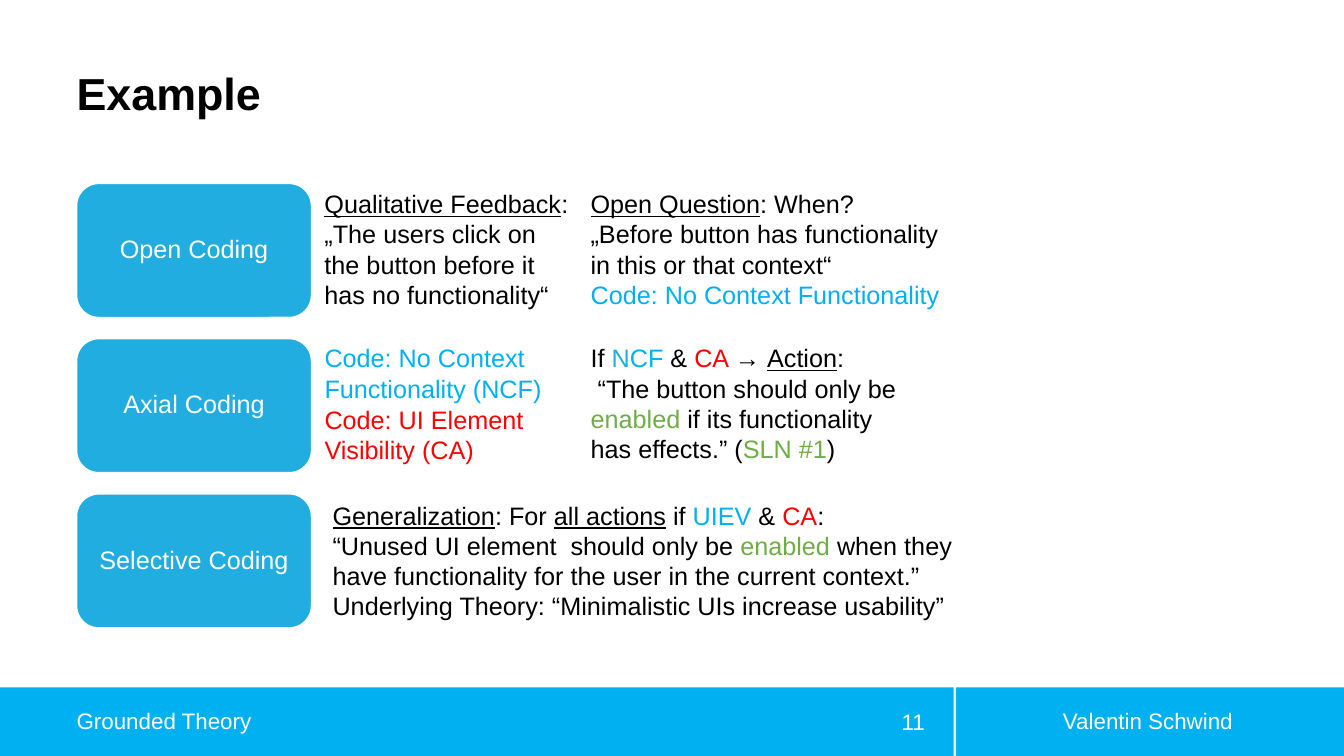
from dataclasses import dataclass

import pptx
import pptx.dml.color
import pptx.enum.shapes
import pptx.enum.text
import pptx.util
from pptx.util import Inches

ALIGN = pptx.enum.text.PP_ALIGN
ANCHOR = pptx.enum.text.MSO_ANCHOR
SHAPE = pptx.enum.shapes.MSO_SHAPE


@dataclass(frozen=True)
class Theme:
    font: str = "Arial"
    black: str = "000000"
    white: str = "FFFFFF"
    footer: str = "00B0F0"
    stage: str = "21ADDF"
    context: str = "00B0F0"
    visibility: str = "FF0000"
    guideline: str = "70AD47"
    title_size: int = 32
    body_size: int = 18
    footer_size: int = 16


THEME = Theme()


def rgb(color):
    return pptx.dml.color.RGBColor.from_string(color)


def span(text, color=THEME.black, underline=False):
    """Describe one stretch of text with its own look."""
    return text, color, underline


def write_text(frame, paragraphs, size=THEME.body_size, bold=False, align=ALIGN.LEFT,
               anchor=ANCHOR.TOP, spacing=None, margins=(0.1, 0.05)):
    """Fill a text frame; each paragraph is a list of spans."""
    frame.word_wrap = True
    frame.vertical_anchor = anchor
    frame.margin_left = frame.margin_right = Inches(margins[0])
    frame.margin_top = frame.margin_bottom = Inches(margins[1])
    for index, spans in enumerate(paragraphs):
        paragraph = frame.add_paragraph() if index else frame.paragraphs[0]
        paragraph.alignment = align
        paragraph.line_spacing = spacing
        for text, color, underline in spans:
            if text == "\n":
                paragraph.add_line_break()
                continue
            run = paragraph.add_run()
            run.text = text
            run.font.name = THEME.font
            run.font.size = pptx.util.Pt(size)
            run.font.bold = bold
            run.font.underline = underline
            run.font.color.rgb = rgb(color)


def add_text(slide, left, top, width, height, paragraphs, **style):
    box = slide.shapes.add_textbox(Inches(left), Inches(top), Inches(width), Inches(height))
    write_text(box.text_frame, paragraphs, **style)


def add_block(slide, kind, left, top, width, height, fill):
    block = slide.shapes.add_shape(kind, Inches(left), Inches(top), Inches(width), Inches(height))
    block.shadow.inherit = False
    block.fill.solid()
    block.fill.fore_color.rgb = rgb(fill)
    block.line.fill.background()
    return block


def add_stage(slide, top, label):
    stage = add_block(slide, SHAPE.ROUNDED_RECTANGLE, 0.76, top, 2.33, 1.33, THEME.stage)
    stage.line.color.rgb = rgb(THEME.white)
    stage.line.width = pptx.util.Pt(1)
    write_text(stage.text_frame, [[span(label, THEME.white)]], align=ALIGN.CENTER,
               anchor=ANCHOR.MIDDLE, spacing=0.9, margins=(0.07, 0.07))


def add_footer(slide):
    for left, width in ((0, 9.46), (9.48, 3.85)):
        add_block(slide, SHAPE.RECTANGLE, left, 6.82, width, 0.68, THEME.footer)
    entries = (
        ("Grounded Theory", 0.76, 6.95, 6.14, ALIGN.LEFT, (0, 0)),
        ("11", 8.41, 6.96, 0.86, ALIGN.RIGHT, (0.1, 0.05)),
        ("Valentin Schwind", 9.61, 6.95, 3.55, ALIGN.CENTER, (0.1, 0.05)),
    )
    for text, left, top, width, align, margins in entries:
        add_text(slide, left, top, width, 0.4, [[span(text, THEME.white)]],
                 size=THEME.footer_size, align=align, anchor=ANCHOR.MIDDLE, margins=margins)


def add_open_coding(slide):
    add_text(slide, 3.12, 1.82, 2.64, 1.31, [[
        span("Qualitative Feedback", underline=True),
        span(": „The users click on the button before it has no functionality“"),
    ]])
    add_text(slide, 5.76, 1.82, 3.7, 1.31, [
        [span("Open Question", underline=True), span(": When? "), span("\n"),
         span("„Before button has functionality in this or that context“")],
        [span("Code: No Context Functionality", THEME.context)],
    ])


def add_axial_coding(slide):
    add_text(slide, 3.12, 3.35, 2.48, 0.71,
             [[span("Code: No Context Functionality (NCF)", THEME.context)]])
    add_text(slide, 3.12, 3.96, 2.48, 0.71,
             [[span("Code: UI Element Visibility (CA)", THEME.visibility)]])
    add_text(slide, 5.76, 3.35, 3.39, 1.31, [
        [span("If "), span("N", THEME.stage), span("CF", THEME.context), span(" & "),
         span("CA ", THEME.visibility), span("→ "), span("Action", underline=True), span(":")],
        [span(" “The button should only be "), span("enabled", THEME.guideline),
         span(" if its functionality has effects.” ("),
         span("SLN #1", THEME.guideline), span(")")],
    ])


def add_selective_coding(slide):
    add_text(slide, 3.2, 4.91, 6.42, 1.31, [
        [span("Generalization", underline=True), span(": For "),
         span("all actions", underline=True), span(" if "), span("UIEV", THEME.context),
         span(" & "), span("CA", THEME.visibility), span(":")],
        [span("“Unused UI element  should only be "), span("enabled", THEME.guideline),
         span(" when they have functionality for the user in the current context.”")],
        [span("Underlying Theory: “Minimalistic UIs increase usability”")],
    ])


def main():
    deck = pptx.Presentation()
    deck.slide_width, deck.slide_height = Inches(13.33), Inches(7.5)
    slide = deck.slides.add_slide(deck.slide_layouts[6])

    # Footer and title
    add_footer(slide)
    add_text(slide, 0.76, 0.13, 8.7, 1.06, [[span("Example")]], size=THEME.title_size,
             bold=True, anchor=ANCHOR.BOTTOM, spacing=0.9, margins=(0, 0))

    # Coding stages
    for row, label in enumerate(("Open Coding", "Axial Coding", "Selective Coding")):
        add_stage(slide, 1.82 + 1.54 * row, label)

    # Example for each stage
    add_open_coding(slide)
    add_axial_coding(slide)
    add_selective_coding(slide)

    deck.save("out.pptx")


if __name__ == "__main__":
    main()
